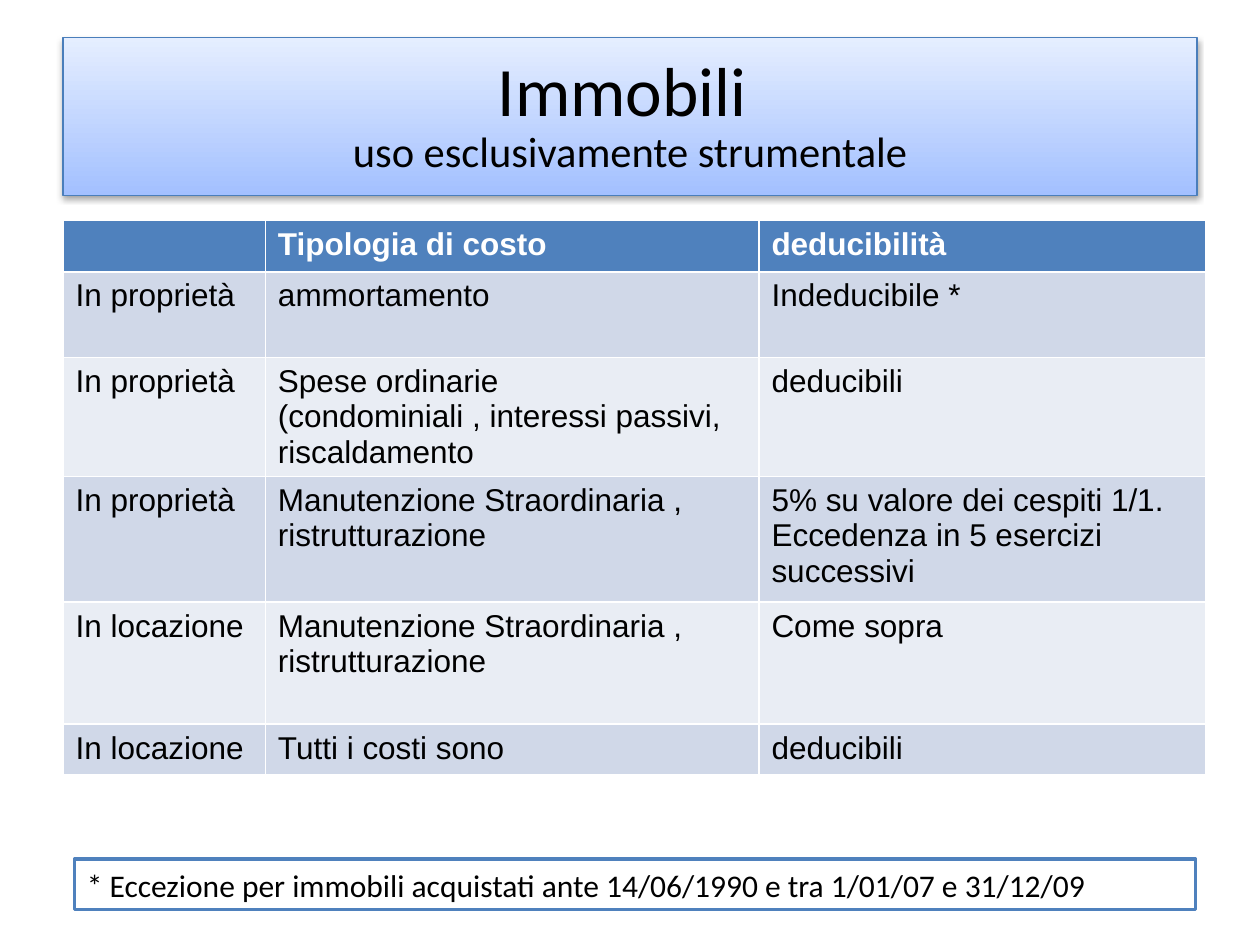
from lxml import etree
from pptx import Presentation
from pptx.dml.color import RGBColor
from pptx.enum import shapes, text
from pptx.oxml import ns
from pptx.util import Cm, Pt


def color(value):
    return RGBColor.from_string(value)


def style(paragraph, name, size, value, bold=False):
    for run in paragraph.runs:
        run.font.name = name
        run.font.size = Pt(size)
        run.font.bold = bold
        run.font.color.rgb = color(value)


presentation = Presentation()
presentation.slide_width, presentation.slide_height = Cm(25.4), Cm(19.05)
slide = presentation.slides.add_slide(presentation.slide_layouts[5])

title = slide.shapes.title
title.left, title.top, title.width, title.height = Cm(1.27), Cm(0.76), Cm(22.86), Cm(3.18)
title.fill.gradient()
title.fill.gradient_angle = 270
for stop, value in zip(title.fill.gradient_stops, ("E5EEFF", "A3C0FF")):
    stop.color.rgb = color(value)
title.line.color.rgb = color("4A7EBB")
title.line.width = Pt(0.75)
properties = title.element.spPr
effects = etree.SubElement(properties, ns.qn("a:effectLst"))
shadow = etree.SubElement(effects, ns.qn("a:outerShdw"), blurRad="40000", dist="23000", dir="5400000", rotWithShape="0")
shadow_color = etree.SubElement(shadow, ns.qn("a:srgbClr"), val="000000")
etree.SubElement(shadow_color, ns.qn("a:alpha"), val="35000")

title.text_frame.auto_size = text.MSO_AUTO_SIZE.NONE
title.text_frame.vertical_anchor = text.MSO_ANCHOR.MIDDLE
heading = title.text_frame.paragraphs[0]
heading.alignment = text.PP_ALIGN.CENTER
heading.line_spacing = 0.9
heading.add_run().text = "Immobili "
heading.add_line_break()
heading.add_run().text = "uso esclusivamente strumentale"
style(heading, "Calibri", 39.6, "000000")
heading.runs[1].font.size = Pt(24.3)

rows = [
    ("", "Tipologia di costo", "deducibilità"),
    ("In proprietà", "ammortamento", "Indeducibile *"),
    ("In proprietà", "Spese ordinarie\n(condominiali , interessi passivi, riscaldamento", "deducibili"),
    ("In proprietà", "Manutenzione Straordinaria , ristrutturazione",
     "5% su valore dei cespiti 1/1.\nEccedenza in 5 esercizi successivi"),
    ("In locazione", "Manutenzione Straordinaria , ristrutturazione", "Come sopra"),
    ("In locazione", "Tutti i costi sono", "deducibili"),
]
column_widths = [4.08, 9.95, 9.0]
row_heights = [1.03, 1.73, 2.4, 2.53, 2.46, 1.01]
table = slide.shapes.add_table(len(rows), len(column_widths), Cm(1.27), Cm(4.45),
                               Cm(sum(column_widths)), Cm(sum(row_heights))).table
for column, width in zip(table.columns, column_widths):
    column.width = Cm(width)
for index, (row, height, values) in enumerate(zip(table.rows, row_heights, rows)):
    row.height = Cm(height)
    header = index == 0
    fill = "4F81BD" if header else ("E9EDF4", "D0D8E8")[index % 2]
    for cell, value in zip(row.cells, values):
        cell.fill.solid()
        cell.fill.fore_color.rgb = color(fill)
        cell.text_frame.text = value
        for paragraph in cell.text_frame.paragraphs:
            paragraph.font.size = Pt(18)
            style(paragraph, "Arial", 18, "FFFFFF" if header else "000000", header)

note = slide.shapes.add_shape(shapes.MSO_SHAPE.RECTANGLE, Cm(1.5), Cm(17.32), Cm(22.6), Cm(1.02))
note.shadow.inherit = False
note.fill.solid()
note.fill.fore_color.rgb = color("FFFFFF")
note.line.color.rgb = color("4F81BD")
note.line.width = Pt(2)
note.text_frame.word_wrap = True
note.text_frame.text = "* Eccezione per immobili acquistati ante 14/06/1990 e tra 1/01/07 e 31/12/09"
note_paragraph = note.text_frame.paragraphs[0]
note_paragraph.alignment = text.PP_ALIGN.LEFT
style(note_paragraph, "Calibri", 18, "000000")

presentation.save("out.pptx")
